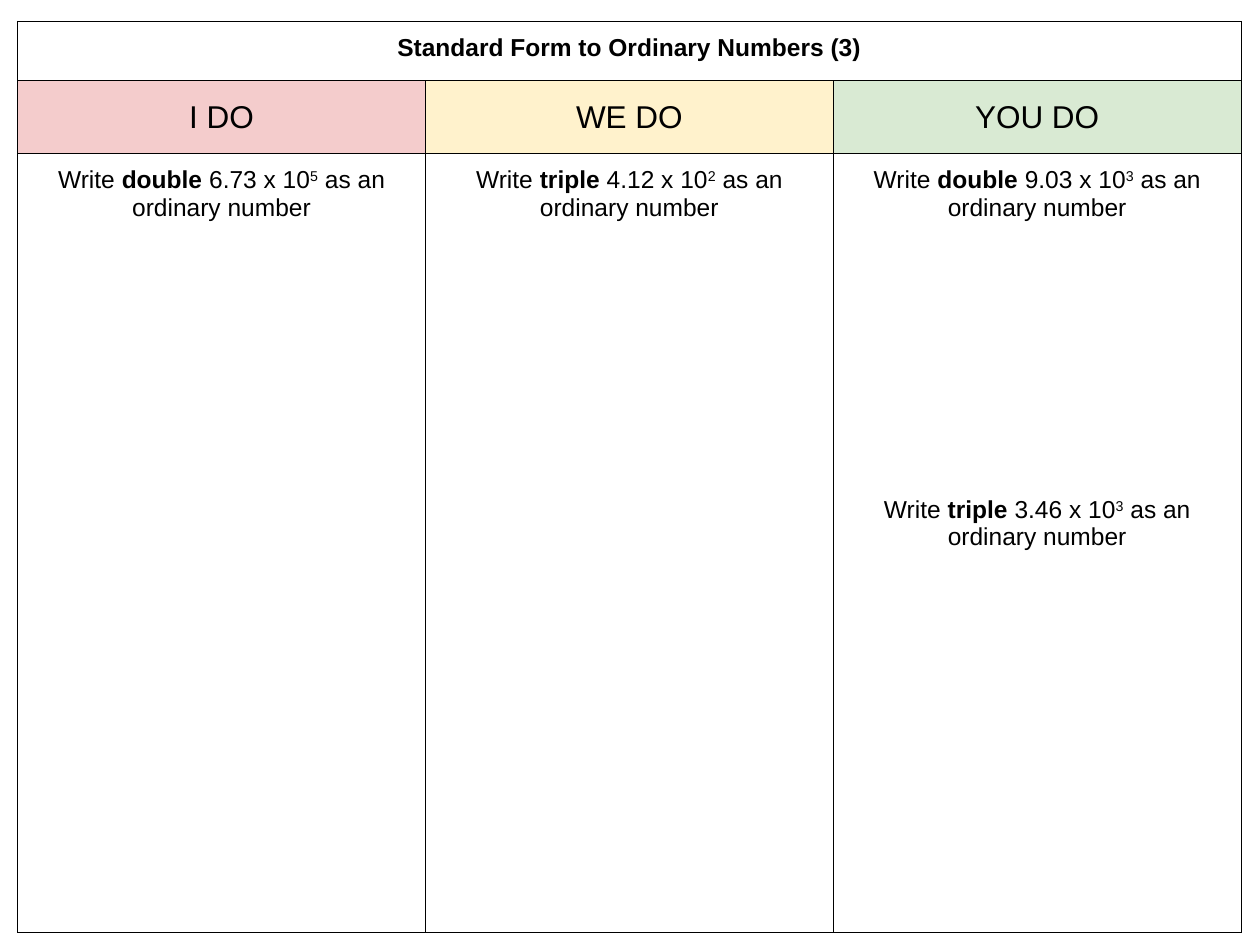
from lxml import etree
from pptx import Presentation
from pptx.dml.color import RGBColor
from pptx.enum.text import MSO_ANCHOR, PP_ALIGN
from pptx.oxml.ns import qn
from pptx.util import Inches, Pt

CENTER = PP_ALIGN.CENTER
TOP, MIDDLE = MSO_ANCHOR.TOP, MSO_ANCHOR.MIDDLE

BLACK = RGBColor(0x00, 0x00, 0x00)
PINK = RGBColor(0xF4, 0xCC, 0xCC)
CREAM = RGBColor(0xFF, 0xF2, 0xCC)
GREEN = RGBColor(0xD9, 0xEA, 0xD3)

TITLE = "Standard Form to Ordinary Numbers (3)"
# Heading, fill and questions (multiplier, number, power of ten) of each column
COLUMNS = [
    ("I DO", PINK, [("double", "6.73", "5")]),
    ("WE DO", CREAM, [("triple", "4.12", "2")]),
    ("YOU DO", GREEN, [("double", "9.03", "3"), ("triple", "3.46", "3")]),
]
ROW_HEIGHTS = [0.47, 0.58, 6.18]
QUESTION_GAP = Pt(157)


def add_text(para, text, size=14, bold=False, superscript=False):
    para.alignment = CENTER
    span = para.add_run()
    span.text = text
    span.font.name = "Arial"
    span.font.size = Pt(size)
    span.font.bold = bold
    span.font.color.rgb = BLACK
    if superscript:
        span.font._element.set("baseline", "30000")


def format_cell(cell, fill=None, anchor=TOP):
    cell.margin_left = cell.margin_right = Inches(0.1)
    cell.margin_top = cell.margin_bottom = Inches(0.1)
    cell.vertical_anchor = anchor
    properties = cell._tc.get_or_add_tcPr()
    for side in ("lnL", "lnR", "lnT", "lnB"):
        line = etree.SubElement(properties, qn(f"a:{side}"), w=str(Pt(0.75)))
        solid = etree.SubElement(line, qn("a:solidFill"))
        etree.SubElement(solid, qn("a:srgbClr"), val=str(BLACK))
    if fill is None:
        cell.fill.background()
    else:
        cell.fill.solid()
        cell.fill.fore_color.rgb = fill


def add_question(para, multiplier, number, power):
    add_text(para, "Write ")
    add_text(para, f"{multiplier} ", bold=True)
    add_text(para, f"{number} x 10")
    add_text(para, power, superscript=True)
    add_text(para, " as an ordinary number")


def add_worksheet(page, left, top, width, height):
    frame = page.shapes.add_table(len(ROW_HEIGHTS), len(COLUMNS),
                                  left, top, width, height)
    table = frame.table
    table.first_row = table.horz_banding = False
    for row, row_height in zip(table.rows, ROW_HEIGHTS):
        row.height = Inches(row_height)

    # Title across all columns
    for index in range(len(COLUMNS)):
        format_cell(table.cell(0, index))
    title = table.cell(0, 0)
    title.merge(table.cell(0, len(COLUMNS) - 1))
    add_text(title.text_frame.paragraphs[0], TITLE, bold=True)

    # Headings and questions
    for index, (heading, fill, questions) in enumerate(COLUMNS):
        head, body = table.cell(1, index), table.cell(2, index)
        format_cell(head, fill, MIDDLE)
        add_text(head.text_frame.paragraphs[0], heading, size=18)
        format_cell(body)
        para = body.text_frame.paragraphs[0]
        add_question(para, *questions[0])
        for question in questions[1:]:
            para = body.text_frame.add_paragraph()
            para.space_before = QUESTION_GAP
            add_question(para, *question)


def main():
    deck = Presentation()
    deck.slide_width, deck.slide_height = Inches(10), Inches(7.5)
    page = deck.slides.add_slide(deck.slide_layouts[6])
    add_worksheet(page, Inches(0.14), Inches(0.17), Inches(9.71), Inches(7.23))
    deck.save("out.pptx")


if __name__ == "__main__":
    main()
